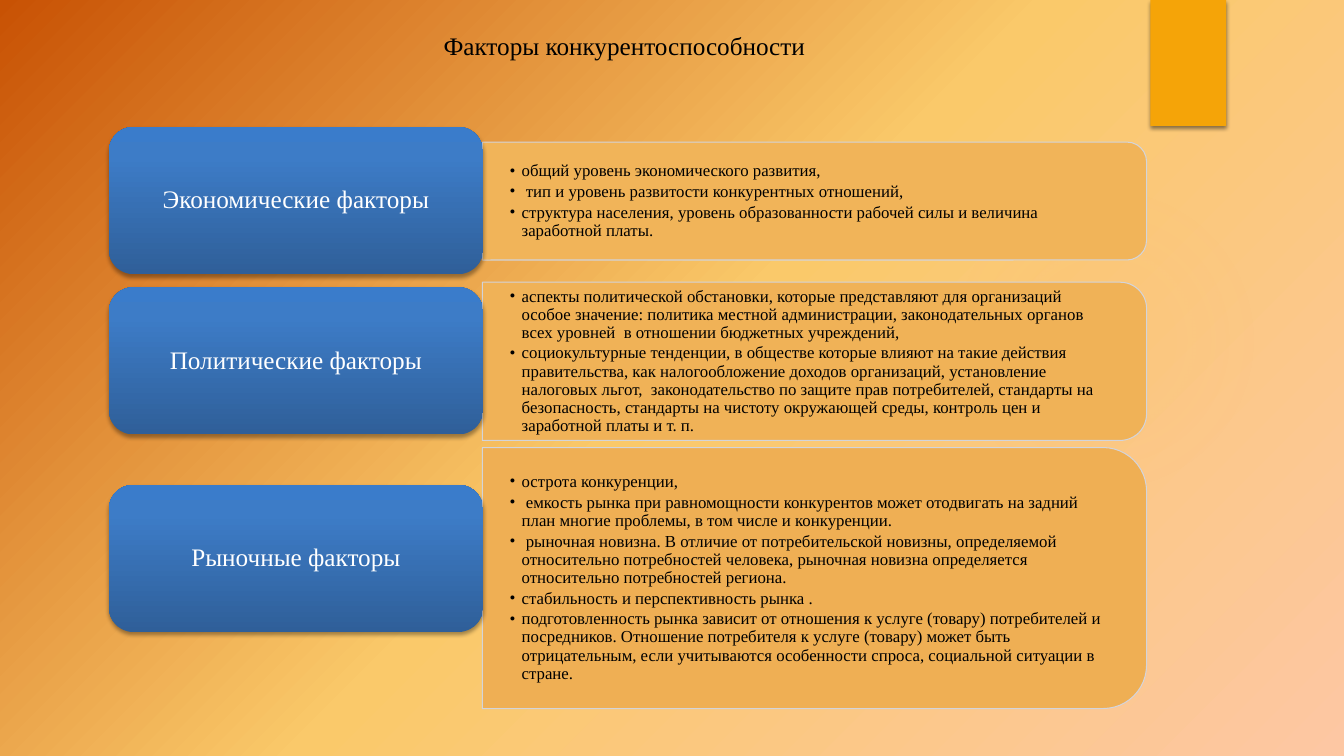
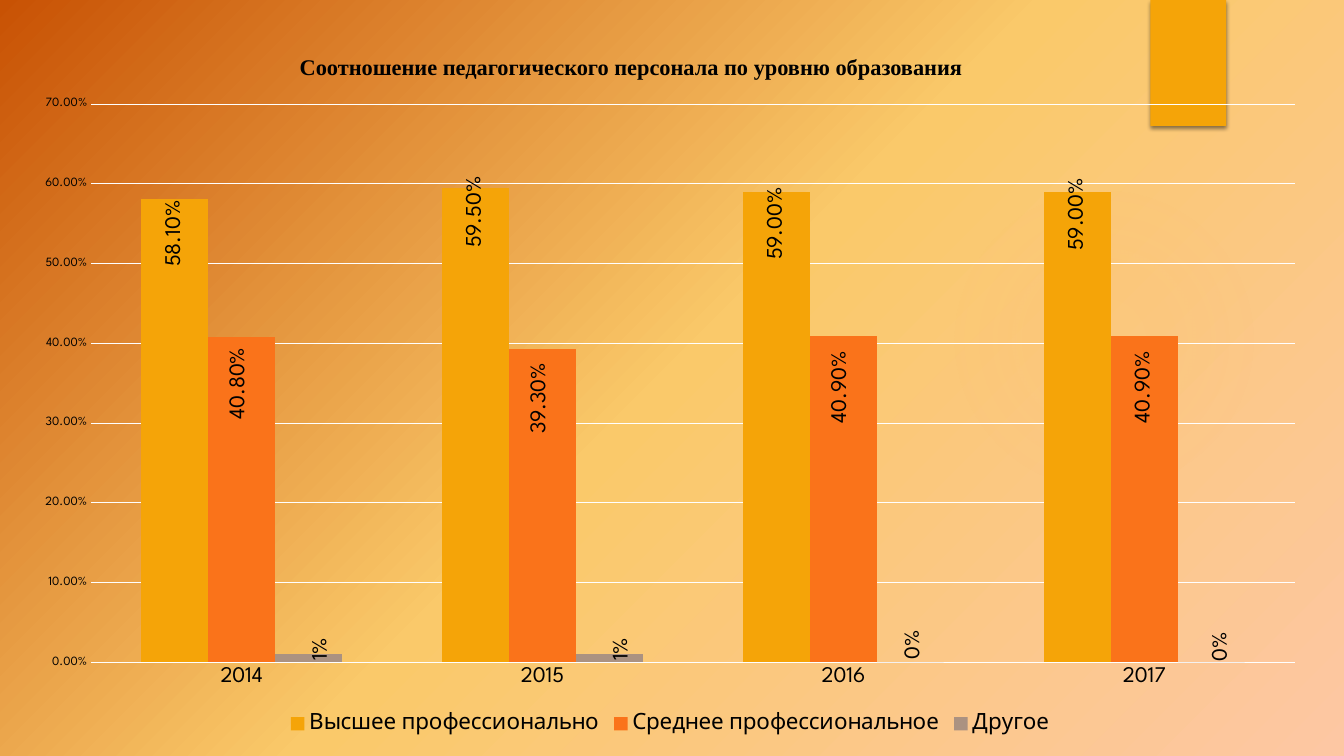
from dataclasses import dataclass
from typing import Any

from lxml import etree
from pptx import Presentation
from pptx import util as u
from pptx.chart import data
from pptx.dml.color import RGBColor
from pptx.enum import chart as ch
from pptx.enum import shapes, text
from pptx.oxml import ns

WIDE, HIGH = u.Inches(13.33), u.Inches(7.5)
HUES = {
    "ink": "000000", "white": "FFFFFF", "gold": "F5A408", "orange": "FA731A",
    "taupe": "AB9281", "sand": "FAC96A", "peach": "FDC7A3", "rust": "C85204",
    "navy": "2F5F99", "blue": "3D7CC7", "sky": "3A7CCB", "edge": "D0D8E8",
    "honey": "F1B459", "amber": "F0B257", "ochre": "EFAF54",
}
SERIF, SANS = "Times New Roman", "League Spartan"
SHAPE = shapes.MSO_SHAPE
Stops = list[tuple[int, str, int]]


@dataclass
class Box:
    left: float
    top: float
    wide: float
    high: float

    def emu(self) -> tuple[int, int, int, int]:
        return (int(WIDE * self.left / 100), int(HIGH * self.top / 100),
                int(WIDE * self.wide / 100), int(HIGH * self.high / 100))


@dataclass
class Factor:
    name: str
    top: float
    panel: Box
    hue: str
    items: list[str]


@dataclass
class Level:
    name: str
    vals: list[float]
    hue: str
    form: str
    shifts: list[tuple[float, float]]


FACTORS = [
    Factor("Экономические факторы", 16.8, Box(35.89, 18.8, 49.42, 15.6), "honey", [
        "общий уровень экономического развития,",
        " тип и уровень развитости конкурентных отношений,",
        "структура населения, уровень образованности рабочей силы и величина заработной платы.",
    ]),
    Factor("Политические факторы", 38, Box(35.89, 37.33, 49.42, 20.93), "amber", [
        "аспекты политической обстановки, которые представляют для организаций особое значение: "
        "политика местной администрации, законодательных органов всех уровней  в отношении "
        "бюджетных учреждений,",
        "социокультурные тенденции, в обществе которые влияют на такие действия правительства, "
        "как налогообложение доходов организаций, установление налоговых льгот,  законодательство "
        "по защите прав потребителей, стандарты на безопасность, стандарты на чистоту окружающей "
        "среды, контроль цен и заработной платы и т. п.",
    ]),
    Factor("Рыночные факторы", 64.13, Box(35.89, 59.2, 49.42, 34.53), "ochre", [
        "острота конкуренции,",
        " емкость рынка при равномощности конкурентов может отодвигать на задний план многие "
        "проблемы, в том числе и конкуренции.",
        " рыночная новизна. В отличие от потребительской новизны, определяемой относительно "
        "потребностей человека, рыночная новизна определяется относительно потребностей региона.",
        "стабильность и перспективность рынка .",
        "подготовленность рынка зависит от отношения к услуге (товару) потребителей и "
        "посредников. Отношение потребителя к услуге (товару) может быть отрицательным, если "
        "учитываются особенности спроса, социальной ситуации в стране.",
    ]),
]
YEARS = ["2014", "2015", "2016", "2017"]
LEVELS = [
    Level("Высшее профессионально", [0.581, 0.595, 0.59, 0.59], "gold", "0.00%",
          [(0, 11), (0, 9.8), (0, 11), (0, 9.6)]),
    Level("Среднее профессиональное", [0.408, 0.393, 0.409, 0.409], "orange", "0.00%",
          [(-0.2, 13.2), (-0.2, 13.6), (-0.2, 13.9), (0, 13.9)]),
    Level("Другое", [0.01, 0.01, 0, 0], "taupe", "0%",
          [(1, 1.6), (1, 1.6), (0.3, 0.2), (0.8, 0.5)]),
]


def put(thing: Any, vals: dict[str, Any]) -> None:
    for key, val in vals.items():
        setattr(thing, key, val)


def rgb(hue: str) -> RGBColor:
    return RGBColor.from_string(HUES[hue])


def style(font: Any, size: float, hue: str = "ink", name: str = SERIF, bold: bool = False) -> None:
    put(font, {"size": u.Pt(size), "name": name, "bold": bold})
    font.color.rgb = rgb(hue)


def sub(root: Any, tag: str, **attrs: Any) -> Any:
    return etree.SubElement(root, ns.qn(tag), {k: str(v) for k, v in attrs.items()})


def tint(root: Any, hue: str, alpha: int) -> None:
    sub(sub(root, "a:srgbClr", val=HUES[hue]), "a:alpha", val=alpha * 1000)


def blend(root: Any, stops: Stops, focus: tuple[int, int, int, int] | None = None) -> None:
    old = root.find(ns.qn("a:solidFill"))
    grad = sub(root, "a:gradFill", rotWithShape=1)
    row = sub(grad, "a:gsLst")
    for pos, hue, alpha in stops:
        tint(sub(row, "a:gs", pos=pos * 1000), hue, alpha)
    if focus:
        sides = {k: v * 1000 for k, v in zip("ltrb", focus)}
        sub(sub(grad, "a:path", path="circle"), "a:fillToRect", **sides)
    else:
        sub(grad, "a:lin", ang=16200000, scaled=0)
    root.replace(old, grad)


def shade(shape: Any, alpha: int, blur: float, dist: float) -> None:
    glow = shape._element.spPr.find(ns.qn("a:effectLst"))
    cast = sub(glow, "a:outerShdw", blurRad=u.Pt(blur), dist=u.Pt(dist), dir=5400000,
               algn="ctr", rotWithShape=0)
    tint(cast, "ink", alpha)


def form(slide: Any, kind: Any, box: Box, hue: str) -> Any:
    shape = slide.shapes.add_shape(kind, *box.emu())
    shape.shadow.inherit = False
    shape.fill.solid()
    shape.fill.fore_color.rgb = rgb(hue)
    shape.line.fill.background()
    return shape


def base(deck: Any, slide: Any) -> None:
    master = deck.slide_master
    master.background.fill.solid()
    back = master._element.find(".//" + ns.qn("p:bgPr"))
    blend(back, [(0, "peach", 100), (50, "sand", 100), (100, "rust", 97)], (100, 100, 0, 0))
    halo = form(slide, SHAPE.OVAL, Box(70.6, 24.4, 23.1, 41.07), "sand")
    blend(halo._element.spPr, [(0, "sand", 7), (36, "sand", 6), (69, "sand", 0)],
          (50, 50, 50, 50))
    band = form(slide, SHAPE.RECTANGLE, Box(85.6, 0, 5.63, 16.67), "gold")
    shade(band, 45, 3, 2)
    for shape in (halo, band):
        master.shapes._spTree.append(shape._element)


def head(slide: Any, words: str, box: Box, size: float, align: Any, bold: bool = False) -> None:
    title = slide.shapes.title
    put(title, dict(zip(("left", "top", "width", "height"), box.emu())))
    frame = title.text_frame
    frame.text = words
    put(frame, {"auto_size": text.MSO_AUTO_SIZE.NONE, "word_wrap": False,
                "vertical_anchor": text.MSO_ANCHOR.TOP})
    frame.paragraphs[0].alignment = align
    style(frame.paragraphs[0].runs[0].font, size, bold=bold)


def panel(slide: Any, fact: Factor) -> None:
    left, top, wide, high = fact.panel.emu()
    shape = form(slide, SHAPE.ROUND_2_SAME_RECTANGLE, fact.panel, fact.hue)
    put(shape, {"left": left + (wide - high) // 2, "top": top + (high - wide) // 2,
                "width": high, "height": wide, "rotation": 90})
    shape.line.color.rgb = rgb("edge")
    shape.line.width = u.Pt(0.75)
    hue = shape.line._ln.find(".//" + ns.qn("a:srgbClr"))
    sub(hue, "a:alpha", val=90000)

    trim = int(high * 0.05)
    frame = slide.shapes.add_textbox(left, top + trim, wide - trim, high - 2 * trim).text_frame
    put(frame, {"word_wrap": True, "vertical_anchor": text.MSO_ANCHOR.MIDDLE,
                "margin_left": u.Inches(0.27), "margin_right": u.Inches(0.27),
                "margin_top": u.Inches(0.14), "margin_bottom": u.Inches(0.14)})
    dent = u.Inches(0.12)
    for num, words in enumerate(fact.items):
        para = frame.add_paragraph() if num else frame.paragraphs[0]
        prop = para._p.get_or_add_pPr()
        prop.set("marL", str(dent))
        prop.set("indent", str(-dent))
        sub(prop, "a:buFont", typeface=SERIF)
        sub(prop, "a:buChar", char="•")
        put(para, {"line_spacing": 0.9, "space_after": u.Pt(1.8)})
        run = para.add_run()
        run.text = words
        style(run.font, 12)


def pill(slide: Any, fact: Factor) -> None:
    shape = form(slide, SHAPE.ROUNDED_RECTANGLE, Box(8.1, fact.top, 27.83, 19.47), "blue")
    blend(shape._element.spPr, [(0, "navy", 100), (80, "blue", 100), (100, "sky", 100)])
    shade(shape, 35, 3.1, 1.8)
    frame = shape.text_frame
    frame.text = fact.name
    put(frame, {"word_wrap": True, "vertical_anchor": text.MSO_ANCHOR.MIDDLE})
    para = frame.paragraphs[0]
    put(para, {"alignment": text.PP_ALIGN.CENTER, "line_spacing": 0.9})
    style(para.runs[0].font, 18, "white")


def place(root: Any, spot: int, **sides: float) -> None:
    old = root.find(ns.qn("c:layout"))
    if old is not None:
        root.remove(old)
    plan = etree.Element(ns.qn("c:layout"))
    grid = sub(plan, "c:manualLayout")
    if "w" in sides:
        sub(grid, "c:layoutTarget", val="inner")
        for mode in ("c:xMode", "c:yMode"):
            sub(grid, mode, val="edge")
    for key, val in sides.items():
        sub(grid, f"c:{key}", val=round(val / 100, 4))
    root.insert(spot, plan)


def label(series: Any, level: Level) -> None:
    for num in range(len(level.vals)):
        tag = series.points[num].data_label
        style(tag.font, 16, name=SANS)
        tag.position = ch.XL_LABEL_POSITION.OUTSIDE_END
    for node, (x, y) in zip(series._element.iter(ns.qn("c:dLbl")), level.shifts):
        body = node.find(".//" + ns.qn("a:bodyPr"))
        body.set("rot", "-5400000")
        body.set("vert", "horz")
        place(node, 1, x=x, y=y)
    for lead in series._element.iter(ns.qn("c:showLeaderLines")):
        lead.set("val", "0")


def bars(slide: Any) -> None:
    table = data.CategoryChartData()
    table.categories = YEARS
    for level in LEVELS:
        table.add_series(level.name, level.vals, level.form)
    box = Box(1.43, 11.33, 96.85, 86.4)
    chart = slide.shapes.add_chart(ch.XL_CHART_TYPE.COLUMN_CLUSTERED, *box.emu(), table).chart
    put(chart, {"has_title": False, "has_legend": True})
    style(chart.font, 10, "white", SANS)
    put(chart.legend, {"position": ch.XL_LEGEND_POSITION.BOTTOM, "include_in_layout": False})
    style(chart.legend.font, 16, name=SANS)
    place(chart._chartSpace.chart.plotArea, 0, x=5.53, y=2.86, w=92.47, h=85.45)

    for axis, size in ((chart.category_axis, 16), (chart.value_axis, 9)):
        put(axis, {"major_tick_mark": ch.XL_TICK_MARK.NONE,
                   "minor_tick_mark": ch.XL_TICK_MARK.NONE})
        axis.format.line.fill.background()
        style(axis.tick_labels.font, size, name=SANS)
    put(chart.value_axis, {"minimum_scale": 0, "maximum_scale": 0.7, "major_unit": 0.1,
                           "has_major_gridlines": True})
    put(chart.value_axis.tick_labels, {"number_format": "0.00%",
                                       "number_format_is_linked": False})
    line = chart.value_axis.major_gridlines.format.line
    line.color.rgb = rgb("white")
    line.width = u.Pt(0.75)

    plot = chart.plots[0]
    put(plot, {"gap_width": 150, "overlap": 0, "vary_by_categories": False})
    for series, level in zip(plot.series, LEVELS):
        series.format.fill.solid()
        series.format.fill.fore_color.rgb = rgb(level.hue)
        label(series, level)


def main() -> None:
    deck = Presentation()
    put(deck, {"slide_width": WIDE, "slide_height": HIGH})
    first, second = (deck.slides.add_slide(deck.slide_layouts[5]) for _ in range(2))
    base(deck, first)
    head(first, "Факторы конкурентоспособности", Box(32.25, 3.33, 50, 5.33), 18,
         text.PP_ALIGN.LEFT)
    for fact in FACTORS:
        panel(first, fact)
        pill(first, fact)
    head(second, "Соотношение педагогического персонала по уровню образования",
         Box(21.23, 6.4, 51.45, 4.93), 16, text.PP_ALIGN.CENTER, True)
    bars(second)
    deck.save("out.pptx")


if __name__ == "__main__":
    main()
